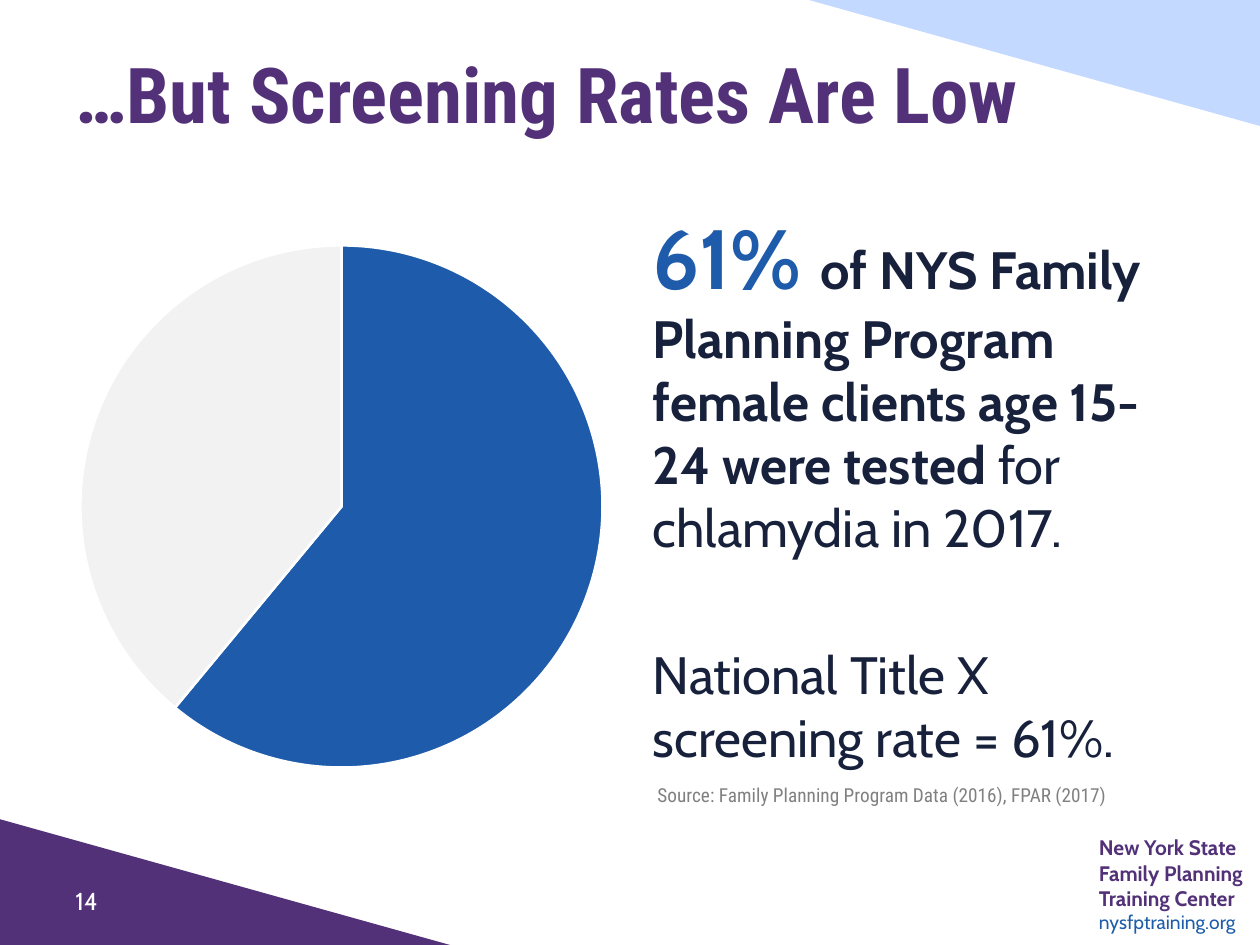
from pptx import Presentation, util as u
from pptx.chart.data import CategoryChartData
from pptx.dml.color import RGBColor
from pptx.enum import chart as ch, shapes, text
from pptx.oxml.ns import qn
from lxml import etree

PX = u.Inches(1) / 126
COLORS = {
    "purple": "523178", "sky": "C3D9FF", "blue": "1E5BAA", "link": "1D5CA9",
    "navy": "17213C", "pale": "F2F2F2", "gray": "808080", "white": "FFFFFF",
}
C = {name: RGBColor.from_string(value) for name, value in COLORS.items()}


def box(*lengths):
    """Turn lengths in px into whole EMU."""
    return [round(n * PX) for n in lengths]


def add_run(p, words, size, color, font="Cabin", bold=False):
    r = p.add_run()
    r.text = words
    r.font.size, r.font.name, r.font.bold = u.Pt(size), font, bold
    r.font.color.rgb = C[color]


prs = Presentation()
prs.slide_width, prs.slide_height = box(1260, 945)
s = prs.slides.add_slide(prs.slide_layouts[1])
title, body = s.placeholders

# Corner triangles
for left, top, color, rotation in ((-1, 819, "purple", 0), (809, 0, "sky", 180)):
    sp = s.shapes.add_shape(shapes.MSO_SHAPE.RIGHT_TRIANGLE, *box(left, top, 451, 126))
    sp.rotation = rotation
    sp.shadow.inherit = False
    sp.fill.solid()
    sp.fill.fore_color.rgb = C[color]
    sp.line.fill.background()

# Title
title.left, title.top, title.width, title.height = box(63, 38, 1134, 110)
tf = title.text_frame
tf.auto_size = text.MSO_AUTO_SIZE.NONE
tf.vertical_anchor = text.MSO_ANCHOR.MIDDLE
p = tf.paragraphs[0]
p.alignment = text.PP_ALIGN.LEFT
add_run(p, "…But Screening Rates Are Low", 44, "purple", "Roboto Condensed", True)

# Screening rate pie
data = CategoryChartData()
data.categories = ["1", "2"]
data.add_series("Series 1", (61, 39))
chart = s.shapes.add_chart(ch.XL_CHART_TYPE.PIE, *box(63, 168, 557, 677), data).chart
chart.has_legend = chart.has_title = False
chart.font.name, chart.font.size = "Calibri", u.Pt(10)
plot = chart.plots[0]
plot.vary_by_categories = True
for i, color in enumerate(("blue", "pale")):
    fmt = plot.series[0].points[i].format
    fmt.fill.solid()
    fmt.fill.fore_color.rgb = C[color]
    fmt.line.color.rgb = C["white"]
    fmt.line.width = u.Pt(1.5)

# Findings
findings = (
    (0, (("61% ", 48, "blue", True),
         ("of NYS Family Planning Program female clients age 15-24 were tested ",
          30, "navy", True),
         ("for chlamydia in 2017.", 30, "navy", False))),
    (48, (("National Title X screening rate = 61%.", 30, "navy", False),)),
)
body.left, body.top, body.width, body.height = box(640, 199, 557, 602)
tf = body.text_frame
tf.auto_size = text.MSO_AUTO_SIZE.NONE
for i, (gap, runs) in enumerate(findings):
    p = tf.add_paragraph() if i else tf.paragraphs[0]
    pPr = p._p.get_or_add_pPr()
    pPr.set("marL", "0")
    pPr.set("indent", "0")
    etree.SubElement(pPr, qn("a:buNone"))
    p.space_before = u.Pt(gap)
    for words, size, color, bold in runs:
        add_run(p, words, size, color, bold=bold)

# Source, page number and training center signature
center = [(line, 12, "purple", "Cabin", True)
          for line in ("New York State", "Family Planning", "Training Center")]
center.append(("nysfptraining.org", 11, "link"))
notes = (
    ((645, 777, 509, 37), False, text.MSO_ANCHOR.TOP,
     [("Source: Family Planning Program Data (2016), FPAR (2017)", 11, "gray",
       "Roboto Condensed")]),
    ((63, 876, 176, 50), False, text.MSO_ANCHOR.MIDDLE, [("14", 14, "white")]),
    ((1099, 835, 190, 102), True, text.MSO_ANCHOR.TOP, center),
)
for place, flush, anchor, lines in notes:
    tf = s.shapes.add_textbox(*box(*place)).text_frame
    tf.word_wrap = True
    tf.vertical_anchor = anchor
    if flush:
        tf.margin_left = tf.margin_top = tf.margin_right = tf.margin_bottom = 0
    for i, line in enumerate(lines):
        add_run(tf.add_paragraph() if i else tf.paragraphs[0], *line)

prs.save("out.pptx")
